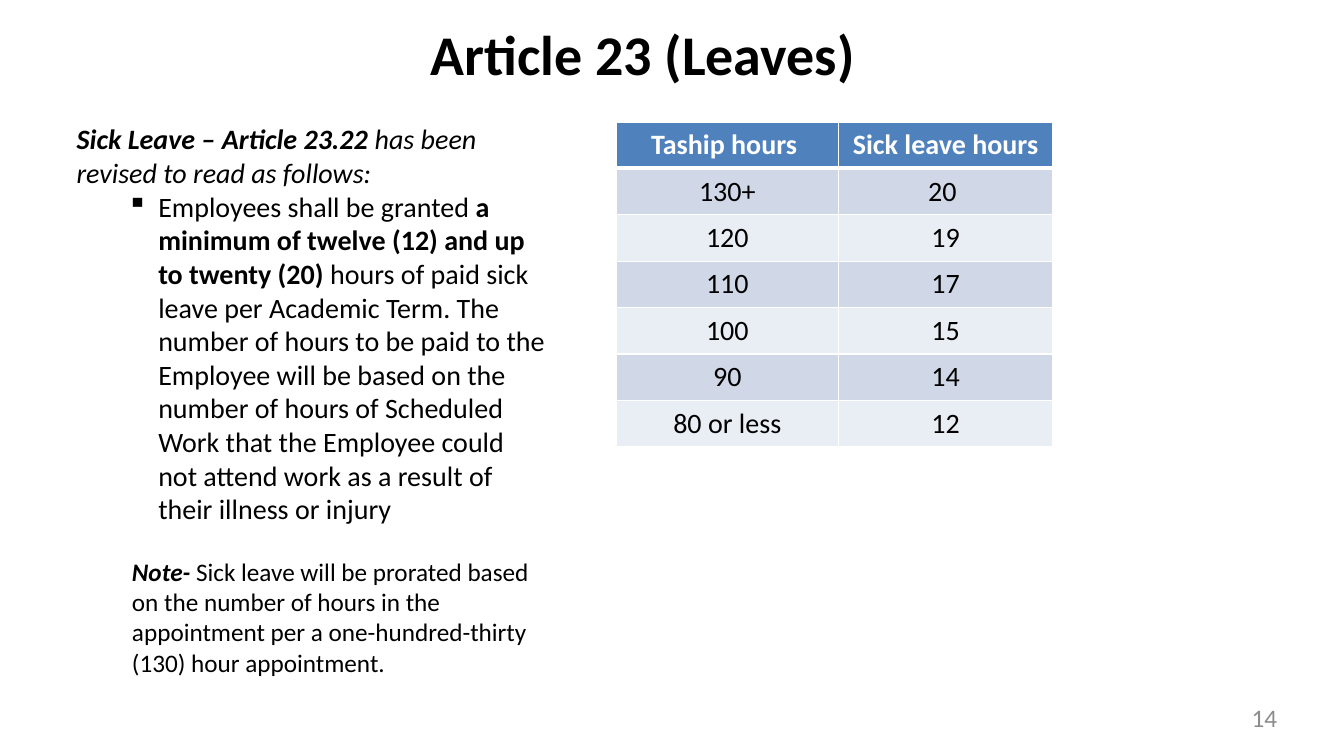
from dataclasses import dataclass

import lxml.etree
import pptx
import pptx.dml.color
import pptx.enum.text
import pptx.oxml.ns
import pptx.util

RGBColor = pptx.dml.color.RGBColor
Align = pptx.enum.text.PP_ALIGN
Anchor = pptx.enum.text.MSO_ANCHOR
BLACK = RGBColor(0x00, 0x00, 0x00)
WHITE = RGBColor(0xFF, 0xFF, 0xFF)
GREY = RGBColor(0x8C, 0x8C, 0x8C)
HEADER_BLUE = RGBColor(0x4F, 0x81, 0xBD)
BAND_COLOURS = (RGBColor(0xE9, 0xED, 0xF4), RGBColor(0xD0, 0xD8, 0xE8))

FONT = "Calibri"
SLIDE_WIDTH = pptx.util.Inches(13.33)
SLIDE_HEIGHT = pptx.util.Inches(7.5)


@dataclass
class Area:
    """Position and size in percent of the slide's width and height."""
    left: float
    top: float
    width: float
    height: float

    def lengths(self) -> tuple[int, int, int, int]:
        return (across(self.left), down(self.top), across(self.width), down(self.height))


@dataclass
class Run:
    text: str
    bold: bool = False
    italic: bool = False


TITLE_AREA = Area(5.33, 2.53, 85, 8.93)
BODY_AREA = Area(5.7, 16.13, 34.95, 54.67)
NOTE_AREA = Area(5.33, 72.93, 36.23, 17.6)
NUMBER_AREA = Area(72, 92.93, 23.03, 5.07)
TABLE_AREA = Area(45.83, 16.13, 32.48, 42)
COLUMN_WIDTHS = (16.58, 15.9)

SICK_LEAVE_INTRO = [
    Run("Sick Leave – Article 23.22 ", bold=True, italic=True),
    Run("has been revised to read as follows:", italic=True),
]
SICK_LEAVE_RULE = [
    Run("Employees shall be granted "),
    Run("a minimum of twelve (12) and up to twenty (20) ", bold=True),
    Run("hours of paid sick leave per Academic Term. The number of hours to be paid "
        "to the Employee will be based on the number of hours of Scheduled Work that "
        "the Employee could not attend work as a result of their illness or injury"),
]
NOTE = [
    Run("Note-", bold=True, italic=True),
    Run(" Sick leave will be prorated based on the number of hours in the "
        "appointment per a one-hundred-thirty (130) hour appointment."),
]
SICK_LEAVE_HOURS = [
    ("Taship hours ", "Sick leave hours"),
    ("130+", "20 "),
    ("120", "19"),
    ("110", "17"),
    ("100", "15"),
    ("90", "14"),
    ("80 or less", "12"),
]


def across(percent: float) -> int:
    return round(SLIDE_WIDTH * percent / 100)


def down(percent: float) -> int:
    return round(SLIDE_HEIGHT * percent / 100)


def write_text(paragraph, runs: list[Run], *, size: float = 20, colour: RGBColor = BLACK,
               align=Align.LEFT, margin: float = 0, indent: float = 0,
               bullet: str = "") -> None:
    """Fill a paragraph; margin and indent are in inches."""
    paragraph.alignment = align
    properties = paragraph._p.get_or_add_pPr()
    properties.set("marL", str(pptx.util.Inches(margin)))
    properties.set("indent", str(pptx.util.Inches(indent)))
    if bullet:
        properties.set("lvl", "1")
        lxml.etree.SubElement(properties, pptx.oxml.ns.qn("a:buChar"), char=bullet)
    for item in runs:
        run = paragraph.add_run()
        run.text = item.text
        run.font.name = FONT
        run.font.size = pptx.util.Pt(size)
        run.font.bold = item.bold
        run.font.italic = item.italic
        run.font.color.rgb = colour


def prepare_frame(frame, inset_x: float = 0, inset_y: float = 0):
    frame.margin_left = frame.margin_right = pptx.util.Inches(inset_x)
    frame.margin_top = frame.margin_bottom = pptx.util.Inches(inset_y)
    frame.word_wrap = True
    frame.auto_size = pptx.enum.text.MSO_AUTO_SIZE.NONE
    frame.vertical_anchor = Anchor.TOP
    return frame


def add_text_frame(slide, area: Area, inset_x: float = 0, inset_y: float = 0):
    return prepare_frame(slide.shapes.add_textbox(*area.lengths()).text_frame, inset_x, inset_y)


def set_border(cell, side: str, points: float) -> None:
    properties = cell._tc.get_or_add_tcPr()
    line = lxml.etree.SubElement(properties, pptx.oxml.ns.qn(f"a:ln{side}"),
                                 w=str(pptx.util.Pt(points)))
    fill = lxml.etree.SubElement(line, pptx.oxml.ns.qn("a:solidFill"))
    lxml.etree.SubElement(fill, pptx.oxml.ns.qn("a:srgbClr"), val=str(WHITE))


def format_cell(cell, text: str, row: int) -> None:
    is_header = row == 0
    cell.margin_left = cell.margin_right = pptx.util.Inches(0.06)
    cell.margin_top = cell.margin_bottom = pptx.util.Inches(0.06)
    widths = {"L": 1, "R": 1, "T": 3 if row == 1 else 1, "B": 3 if is_header else 1}
    for side, points in widths.items():
        set_border(cell, side, points)
    cell.fill.solid()
    cell.fill.fore_color.rgb = HEADER_BLUE if is_header else BAND_COLOURS[row % 2]
    write_text(cell.text_frame.paragraphs[0], [Run(text, bold=is_header)],
               colour=WHITE if is_header else BLACK, align=Align.CENTER)


def add_hours_table(slide) -> None:
    row_count = len(SICK_LEAVE_HOURS)
    table = slide.shapes.add_table(row_count, len(COLUMN_WIDTHS), *TABLE_AREA.lengths()).table
    for column, width in zip(table.columns, COLUMN_WIDTHS):
        column.width = across(width)
    for row, texts in enumerate(SICK_LEAVE_HOURS):
        table.rows[row].height = down(TABLE_AREA.height / row_count)
        for column, text in enumerate(texts):
            format_cell(table.cell(row, column), text, row)


def main() -> None:
    presentation = pptx.Presentation()
    presentation.slide_width = SLIDE_WIDTH
    presentation.slide_height = SLIDE_HEIGHT
    slide = presentation.slides.add_slide(presentation.slide_layouts.get_by_name("Title Only"))

    title = slide.shapes.title
    title.left, title.top, title.width, title.height = TITLE_AREA.lengths()
    write_text(prepare_frame(title.text_frame).paragraphs[0],
               [Run("Article 23 (Leaves)", bold=True)], size=40, align=Align.CENTER)

    body = add_text_frame(slide, BODY_AREA)
    write_text(body.paragraphs[0], SICK_LEAVE_INTRO)
    write_text(body.add_paragraph(), SICK_LEAVE_RULE, margin=0.81, indent=-0.31, bullet="▪")

    number = add_text_frame(slide, NUMBER_AREA)
    write_text(number.paragraphs[0], [Run("14")], size=18, colour=GREY, align=Align.RIGHT)

    add_hours_table(slide)

    note = add_text_frame(slide, NOTE_AREA, inset_x=0.1, inset_y=0.05)
    write_text(note.paragraphs[0], NOTE, size=18, margin=0.5)

    presentation.save("out.pptx")


if __name__ == "__main__":
    main()
